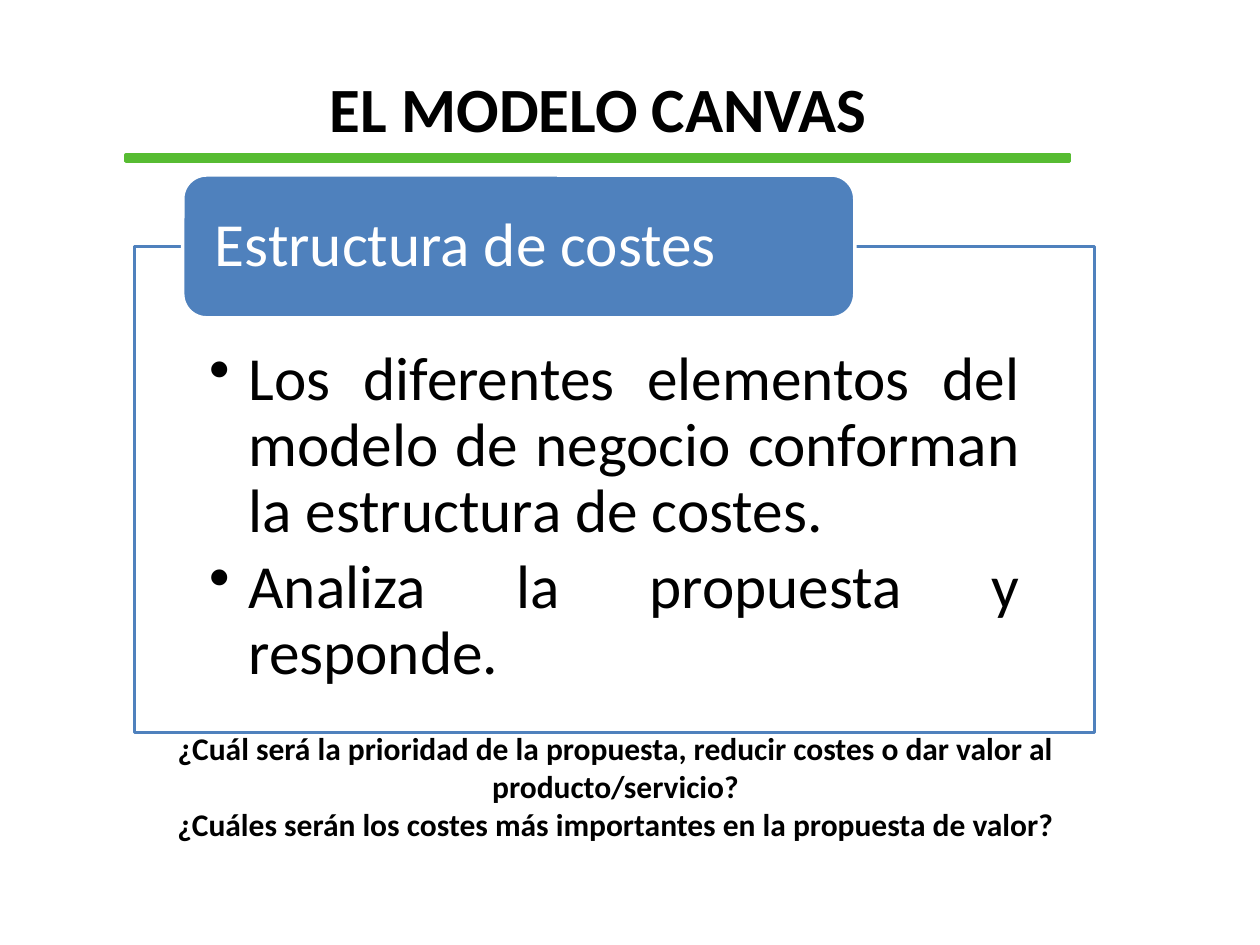
from dataclasses import dataclass

from lxml import etree
from pptx import Presentation
from pptx.dml.color import RGBColor
from pptx.enum.shapes import MSO_SHAPE
from pptx.enum.text import MSO_ANCHOR, PP_ALIGN
from pptx.oxml.ns import qn
from pptx.util import Pt

RECT, ROUNDED = MSO_SHAPE.RECTANGLE, MSO_SHAPE.ROUNDED_RECTANGLE
TOP, MIDDLE = MSO_ANCHOR.TOP, MSO_ANCHOR.MIDDLE
LEFT, CENTER, JUSTIFY = PP_ALIGN.LEFT, PP_ALIGN.CENTER, PP_ALIGN.JUSTIFY
TITLE_ONLY = 5


@dataclass(frozen=True)
class Theme:
    font: str = "Calibri"
    ink: RGBColor = RGBColor(0, 0, 0)
    white: RGBColor = RGBColor(255, 255, 255)
    blue: RGBColor = RGBColor(0x4F, 0x81, 0xBD)
    green: RGBColor = RGBColor(0x57, 0xBC, 0x32)
    title_size: int = 36
    card_size: int = 35
    question_size: int = 18
    line_width: int = 2


THEME = Theme()


def place(part, box):
    part.left, part.top, part.width, part.height = (Pt(value) for value in box)


def add_block(slide, kind, box, fill, line):
    block = slide.shapes.add_shape(kind, *(Pt(value) for value in box))
    block.shadow.inherit = False
    block.fill.solid()
    block.fill.fore_color.rgb = fill
    block.line.color.rgb = line
    block.line.width = Pt(THEME.line_width)
    return block


def set_frame(frame, anchor, insets):
    frame.word_wrap = True
    frame.vertical_anchor = anchor
    (frame.margin_left, frame.margin_top,
     frame.margin_right, frame.margin_bottom) = (Pt(inset) for inset in insets)


def write(frame, lines, size, color, align, bold=False, spacing=1.0,
          after=0, bullet_indent=None):
    for index, line in enumerate(lines):
        paragraph = frame.paragraphs[0] if index == 0 else frame.add_paragraph()
        if bullet_indent is not None:
            properties = paragraph._p.get_or_add_pPr()
            properties.set("marL", str(Pt(bullet_indent)))
            properties.set("indent", str(-Pt(bullet_indent)))
            etree.SubElement(properties, qn("a:buChar"), char="•")
        paragraph.alignment = align
        paragraph.line_spacing = spacing
        paragraph.space_before = Pt(0)
        paragraph.space_after = Pt(after)
        run = paragraph.add_run()
        run.text = line
        run.font.name = THEME.font
        run.font.size = Pt(size)
        run.font.bold = bold
        run.font.color.rgb = color


def add_heading(slide, box, text):
    """Title centred above a full-width green rule."""
    left, top, width, height = box
    add_block(slide, RECT, (left, top + 52.6, width, height - 52.6),
              THEME.green, THEME.green)
    title = slide.shapes.title
    place(title, (left + 90, top, 360, 51))
    set_frame(title.text_frame, TOP, (7.2, 3.6, 7.2, 3.6))
    write(title.text_frame, [text], THEME.title_size, THEME.ink, CENTER, bold=True)


def add_card(slide, box, heading, points):
    """Outlined body with a rounded heading across its top edge."""
    left, top, width, height = box
    heading_height = 81.6
    body_top = top + heading_height / 2
    body = add_block(slide, RECT, (left, body_top, width, height - heading_height / 2),
                     THEME.white, THEME.blue)
    set_frame(body.text_frame, TOP, (42.5, 57.6, 42.5, 19.4))
    write(body.text_frame, points, THEME.card_size, THEME.ink, JUSTIFY,
          spacing=0.9, after=5.5, bullet_indent=22.5)

    label = add_block(slide, ROUNDED,
                      (left + width * 0.05, top, width * 0.7, heading_height),
                      THEME.blue, THEME.white)
    set_frame(label.text_frame, MIDDLE, (14.4, 0, 14.4, 0))
    write(label.text_frame, [heading], THEME.card_size, THEME.white, LEFT, spacing=0.9)


def add_questions(slide, box, questions):
    area = slide.shapes.add_textbox(*(Pt(value) for value in box))
    set_frame(area.text_frame, TOP, (7.2, 3.6, 7.2, 3.6))
    write(area.text_frame, questions, THEME.question_size, THEME.ink, CENTER, bold=True)


def main():
    deck = Presentation()
    deck.slide_width, deck.slide_height = Pt(720), Pt(540)
    slide = deck.slides.add_slide(deck.slide_layouts[TITLE_ONLY])
    add_heading(slide, (72, 36, 539.3, 56.2), "EL MODELO CANVAS")
    add_card(slide, (77, 100, 548.6, 318.5), "Estructura de costes", [
        "Los diferentes elementos del modelo de negocio conforman "
        "la estructura de costes.",
        "Analiza la propuesta y responde.",
    ])
    add_questions(slide, (77.8, 413.3, 548, 94.3), [
        "¿Cuál será la prioridad de la propuesta, reducir costes o dar valor "
        "al producto/servicio?",
        "¿Cuáles serán los costes más importantes en la propuesta de valor?",
    ])
    deck.save("out.pptx")


if __name__ == "__main__":
    main()
